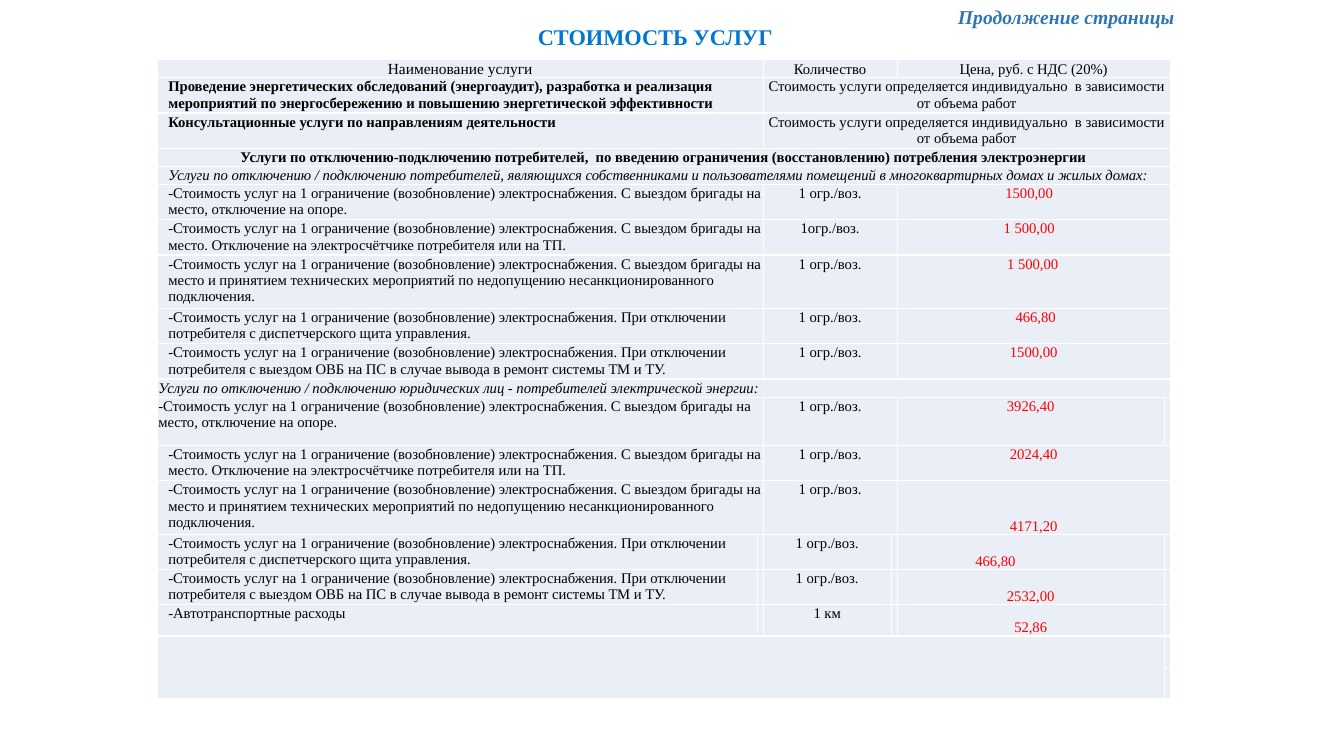
import pptx
import pptx.util
import pptx.dml.color
import pptx.enum.text
import pptx.oxml
import lxml.etree

Inches, Pt = pptx.util.Inches, pptx.util.Pt
ALIGN, ANCHOR = pptx.enum.text.PP_ALIGN, pptx.enum.text.MSO_ANCHOR
FONT = "Times New Roman"
COLORS = {"title": "0077D2", "continued": "2E75B6", "text": "000000",
          "price": "FF0000", "cell": "EAEFF7", "border": "FFFFFF"}

SERVICE = "-Стоимость услуг на 1 ограничение (возобновление) электроснабжения. "
POLE = SERVICE + "С выездом бригады на место, отключение на опоре."
METER = SERVICE + "С выездом бригады на место. Отключение на электросчётчике потребителя или на ТП."
MEASURES = SERVICE + "С выездом бригады на место и принятием технических мероприятий по недопущению несанкционированного подключения."
PANEL = SERVICE + "При отключении потребителя с диспетчерского щита управления."
CREW = SERVICE + "При отключении потребителя с выездом ОВБ на ПС в случае вывода в ремонт системы ТМ и ТУ."
BY_VOLUME = "Стоимость услуги определяется индивидуально  в зависимости от объема работ"
UNIT = "1 огр./воз."

MERGED, PRICE_SPLIT, SPLIT = (2, 2, 2), (2, 2, 1, 1), (1, 1, 1, 1, 1, 1)
HALF, FULL = (2, 4), (6,)
CENTER = {"align": ALIGN.CENTER}
HEAD = {"align": ALIGN.CENTER, "anchor": ANCHOR.MIDDLE}
NAME = {"indent": 0.1}
BOLD_NAME = {"indent": 0.1, "bold": True}
PRICE = {"align": ALIGN.CENTER, "color": "price"}
LOW_PRICE = {**PRICE, "anchor": ANCHOR.BOTTOM}


def priced(height, spans, name, unit, price, name_style=NAME, price_style=PRICE):
    filled = [(name, name_style), (unit, CENTER), (price, price_style)]
    if spans == SPLIT:
        filled = [entry for pair in filled for entry in (pair, ("", {}))]
    elif spans == PRICE_SPLIT:
        filled.append(("", {}))
    return height, spans, filled


ROWS = [
    (0.18, MERGED, [("Наименование услуги", {**HEAD, "size": 11}), ("Количество", HEAD),
                    ("Цена, руб. с НДС (20%)", HEAD)]),
    (0.35, HALF, [("Проведение энергетических обследований (энергоаудит), разработка и реализация "
                   "мероприятий по энергосбережению и повышению энергетической эффективности", BOLD_NAME),
                  (BY_VOLUME, CENTER)]),
    (0.35, HALF, [("Консультационные услуги по направлениям деятельности", BOLD_NAME),
                  (BY_VOLUME, CENTER)]),
    (0.18, FULL, [("Услуги по отключению-подключению потребителей,  по введению ограничения "
                   "(восстановлению) потребления электроэнергии", {**CENTER, "bold": True})]),
    (0.18, FULL, [("Услуги по отключению / подключению потребителей, являющихся собственниками и "
                   "пользователями помещений в многоквартирных домах и жилых домах:",
                   {**NAME, "italic": True})]),
    priced(0.35, MERGED, POLE, UNIT, "1500,00", price_style={**PRICE, "right": 0.1}),
    priced(0.35, MERGED, METER, "1огр./воз.", "1 500,00", price_style={**PRICE, "right": 0.1}),
    priced(0.53, MERGED, MEASURES, UNIT, "1 500,00", price_style={**PRICE, "right": 0.03}),
    priced(0.35, MERGED, PANEL, UNIT, "466,80", price_style={**PRICE, "left": 0.05}),
    priced(0.35, MERGED, CREW, UNIT, "1500,00"),
    (0.18, FULL, [("Услуги по отключению / подключению юридических лиц - потребителей "
                   "электрической энергии:", {"italic": True})]),
    priced(0.48, PRICE_SPLIT, POLE, UNIT, "3926,40", name_style={}),
    priced(0.35, MERGED, METER, UNIT, "2024,40"),
    priced(0.53, MERGED, MEASURES, UNIT, "4171,20", price_style=LOW_PRICE),
    priced(0.35, SPLIT, PANEL, UNIT, "466,80", price_style={**LOW_PRICE, "right": 0.71}),
    priced(0.35, SPLIT, CREW, UNIT, "2532,00", price_style=LOW_PRICE),
    priced(0.31, SPLIT, "-Автотранспортные расходы", "1 км", "52,86", price_style=LOW_PRICE),
    (0.31, (5, 1), [("", {}), ("", {})]),
    (0.31, (5, 1), [("", {}), ("", {})]),
]
WIDTHS = [5.95, 0.04, 1.27, 0.04, 2.65, 0.04]
LABELS = [
    ("СТОИМОСТЬ УСЛУГ", (5.22, 0.18, 2.56, 0.37), 16, "title", False, ANCHOR.TOP, 1.0),
    ("Продолжение страницы", (8.65, 0.05, 3.85, 0.26), 14, "continued", True, ANCHOR.MIDDLE, 0.9),
]


def rgb(name):
    return pptx.dml.color.RGBColor.from_string(COLORS[name])


def add_span(para, text, size, color, bold=False, italic=False):
    span = para.add_run()
    span.text = text
    span.font.name = FONT
    span.font.size = Pt(size)
    span.font.bold = bold
    span.font.italic = italic
    span.font.color.rgb = rgb(color)


def add_borders(cell):
    properties = cell._tc.get_or_add_tcPr()
    for position, side in enumerate(("lnL", "lnR", "lnT", "lnB")):
        line = lxml.etree.Element(pptx.oxml.ns.qn("a:" + side), w=str(Pt(1)))
        fill = lxml.etree.SubElement(line, pptx.oxml.ns.qn("a:solidFill"))
        lxml.etree.SubElement(fill, pptx.oxml.ns.qn("a:srgbClr"), val=COLORS["border"])
        properties.insert(position, line)


def format_cell(cell):
    cell.margin_left = cell.margin_right = cell.margin_top = Inches(0.01)
    cell.margin_bottom = 0
    cell.fill.solid()
    cell.fill.fore_color.rgb = rgb("cell")
    add_borders(cell)


def fill_cell(cell, text, style):
    cell.vertical_anchor = style.get("anchor", ANCHOR.TOP)
    cell.margin_left = Inches(style.get("left", 0.01))
    cell.margin_right = Inches(style.get("right", 0.01))
    para = cell.text_frame.paragraphs[0]
    para.alignment = style.get("align", ALIGN.LEFT)
    if "indent" in style:
        para._p.get_or_add_pPr().set("marL", str(Inches(style["indent"])))
    if text:
        add_span(para, text, style.get("size", 10.5), style.get("color", "text"),
                 style.get("bold", False), style.get("italic", False))
    else:
        lxml.etree.SubElement(para._p, pptx.oxml.ns.qn("a:endParaRPr"), sz="1000")


def add_price_table(page):
    heights = [height for height, spans, entries in ROWS]
    frame = page.shapes.add_table(len(ROWS), len(WIDTHS), Inches(1.56), Inches(0.59),
                                  Inches(sum(WIDTHS)), Inches(sum(heights)))
    table = frame.table
    table.first_row = table.horz_banding = False
    for column, width in zip(table.columns, WIDTHS):
        column.width = Inches(width)
    for cell in table.iter_cells():
        format_cell(cell)
    for index, (height, spans, entries) in enumerate(ROWS):
        table.rows[index].height = Inches(height)
        left = 0
        for span, (text, style) in zip(spans, entries):
            cell = table.cell(index, left)
            fill_cell(cell, text, style)
            if span > 1 and span < 5 or span == 6:
                cell.merge(table.cell(index, left + span - 1))
            left += span
    last = len(ROWS) - 1
    table.cell(last - 1, 0).merge(table.cell(last, 4))


def add_label(page, text, place, size, color, italic, anchor, spacing):
    box = page.shapes.add_textbox(*map(Inches, place))
    box.text_frame.word_wrap = italic
    box.text_frame.vertical_anchor = anchor
    para = box.text_frame.paragraphs[0]
    para.alignment = ALIGN.CENTER
    para.line_spacing = spacing
    add_span(para, text, size, color, True, italic)


def main():
    deck = pptx.Presentation()
    deck.slide_width, deck.slide_height = Inches(13.33), Inches(7.5)
    page = deck.slides.add_slide(deck.slide_layouts[6])
    add_price_table(page)
    for label in LABELS:
        add_label(page, *label)
    deck.save("out.pptx")


if __name__ == "__main__":
    main()
